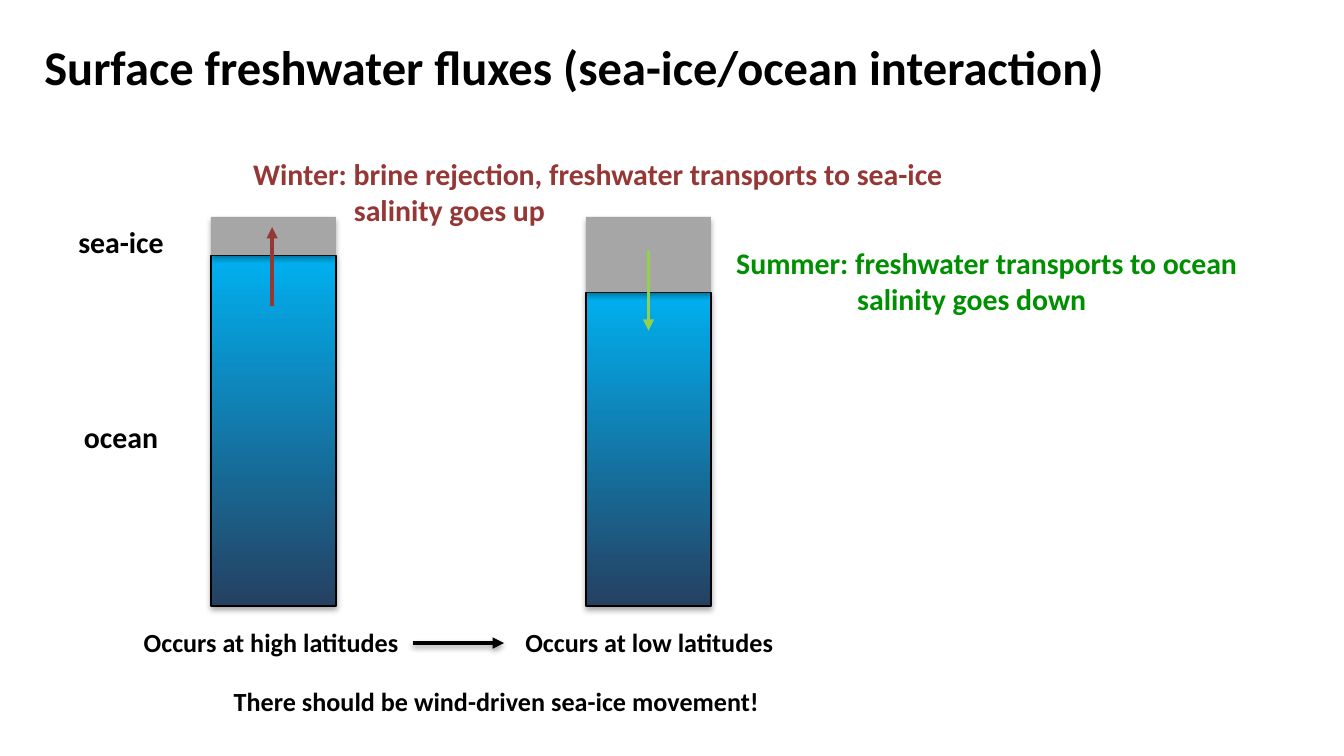
from lxml.etree import SubElement
from pptx import Presentation
from pptx.dml.color import RGBColor
from pptx.enum.shapes import MSO_CONNECTOR, MSO_SHAPE
from pptx.enum.text import MSO_ANCHOR, MSO_AUTO_SIZE, PP_ALIGN
from pptx.oxml.ns import qn
from pptx.util import Pt

PX = 4572  # EMU per px, 200 px to the inch
COLORS = {
    "black": "000000",
    "deep": "254061",
    "surface": "00B0F0",
    "ice": "A6A6A6",
    "winter": "953735",
    "summer": "008F00",
    "melt": "92D050",
}
RGB = {name: RGBColor.from_string(value) for name, value in COLORS.items()}


def add_text(box, lines, size, color, align=PP_ALIGN.LEFT, indent=0):
    """Add a bold text box; lines after the first are indented by indent px."""
    s = slide.shapes.add_textbox(*(v * PX for v in box))
    tf = s.text_frame
    tf.word_wrap = True
    tf.auto_size = MSO_AUTO_SIZE.SHAPE_TO_FIT_TEXT
    for i, line in enumerate(lines):
        p = tf.add_paragraph() if i else tf.paragraphs[0]
        p.alignment = align
        if i:
            p._p.get_or_add_pPr().set("marL", str(indent * PX))
        r = p.add_run()
        r.text = line
        r.font.name = "Calibri"
        r.font.size = Pt(size)
        r.font.bold = True
        r.font.color.rgb = RGB[color]
    return tf


def set_shadow(s, distance, alpha):
    """Give a shape a soft shadow below it, or none when alpha is 0."""
    effects = SubElement(s._element.spPr, qn("a:effectLst"))
    if alpha:
        shadow = SubElement(effects, qn("a:outerShdw"), blurRad="40000",
                            dist=str(distance), dir="5400000", rotWithShape="0")
        color = SubElement(shadow, qn("a:srgbClr"), val=COLORS["black"])
        SubElement(color, qn("a:alpha"), val=str(alpha * 1000))


prs = Presentation()
prs.slide_width, prs.slide_height = 2000 * PX, 1125 * PX
slide = prs.slides.add_slide(prs.slide_layouts[6])

# Title
tf = add_text((66, 50, 1898, 92),
              ["Surface freshwater fluxes (sea-ice/ocean interaction)"], 26, "black")
tf.auto_size = MSO_AUTO_SIZE.NONE
tf.vertical_anchor = MSO_ANCHOR.BOTTOM
tf.margin_left = tf.margin_top = tf.margin_right = tf.margin_bottom = 0

# Water columns: ocean below, sea-ice on top
TOP, BOTTOM, WIDTH = 323, 902, 186
for left, ice_height in ((314, 57), (872, 112)):
    ocean_top = TOP + ice_height
    ocean = slide.shapes.add_shape(MSO_SHAPE.RECTANGLE, left * PX, ocean_top * PX,
                                   WIDTH * PX, (BOTTOM - ocean_top) * PX)
    ocean.fill.gradient()
    ocean.fill.gradient_angle = 90
    for stop, color in zip(ocean.fill.gradient_stops, ("deep", "surface")):
        stop.color.rgb = RGB[color]
    ocean.line.color.rgb = RGB["black"]
    ocean.line.width = Pt(0.75)

    ice = slide.shapes.add_shape(MSO_SHAPE.RECTANGLE, left * PX, TOP * PX,
                                 WIDTH * PX, ice_height * PX)
    ice.fill.solid()
    ice.fill.fore_color.rgb = RGB["ice"]
    ice.line.fill.background()
    for s in (ocean, ice):
        set_shadow(s, 23000, 35)

# Layer labels
for top, label in ((323, "sea-ice"), (613, "ocean")):
    add_text((95, top, 170, 74), [label], 16, "black", PP_ALIGN.CENTER)

# Seasons
add_text((357, 222, 1084, 128),
         ["Winter: brine rejection, freshwater transports to sea-ice",
          "salinity goes up"], 16, "winter", indent=150)
add_text((1076, 355, 888, 128),
         ["Summer: freshwater transports to ocean",
          "salinity goes down"], 16, "summer", indent=180)

# Captions
for left, top, width, caption in (
    (194, 923, 516, "Occurs at high latitudes"),
    (762, 922, 516, "Occurs at low latitudes"),
    (328, 1010, 910, "There should be wind-driven sea-ice movement!"),
):
    add_text((left, top, width, 68), [caption], 14, "black")

# Arrows, each from its tail to its point
for ends, color, alpha in (
    ((405, 456, 405, 338), "winter", 0),
    ((965, 372, 965, 492), "melt", 0),
    ((614, 957, 750, 957), "black", 38),
):
    s = slide.shapes.add_connector(MSO_CONNECTOR.STRAIGHT, *(v * PX for v in ends))
    s.line.color.rgb = RGB[color]
    s.line.width = Pt(2)
    SubElement(s._element.spPr.find(qn("a:ln")), qn("a:tailEnd"), type="triangle")
    set_shadow(s, 20000, alpha)

prs.save("out.pptx")
